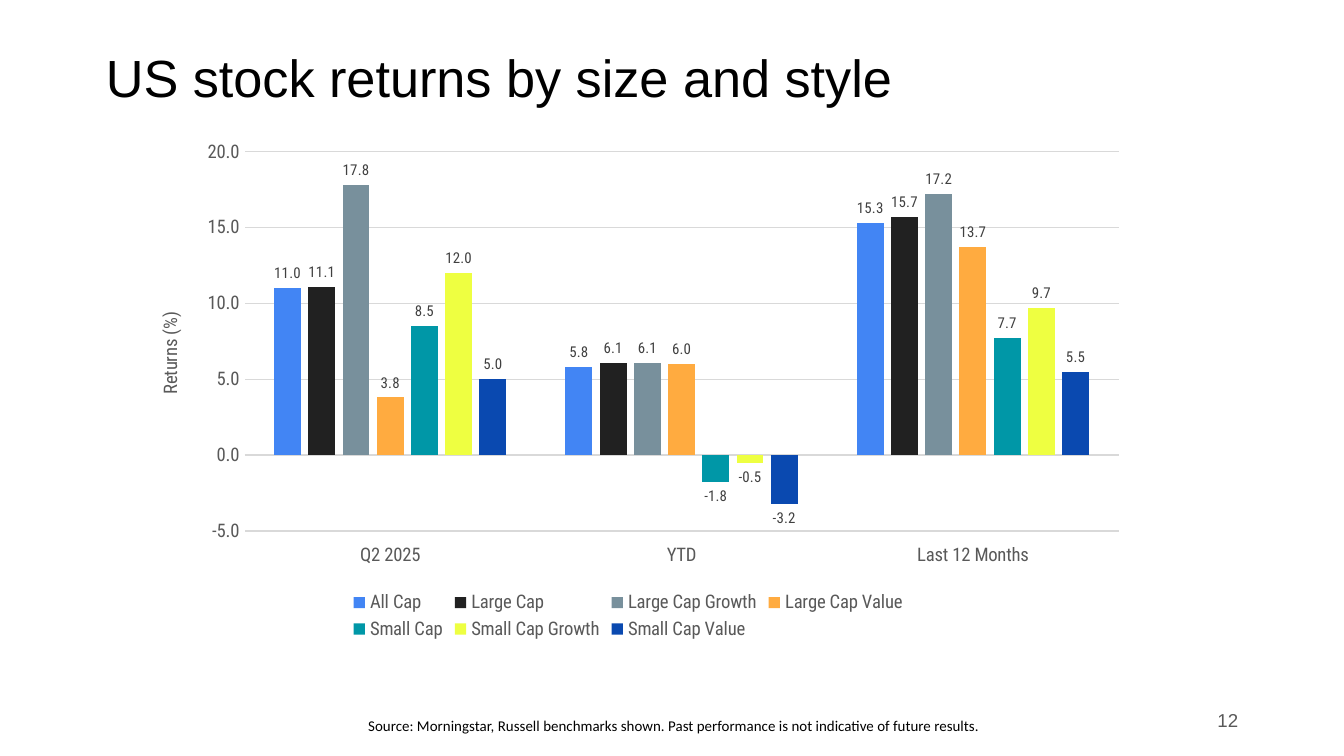
import pptx
import pptx.chart.data
import pptx.dml.color
import pptx.enum.chart
import pptx.enum.text
import pptx.oxml
import pptx.oxml.ns
import pptx.util
from dataclasses import dataclass

Cm = pptx.util.Cm
Pt = pptx.util.Pt
Align = pptx.enum.text.PP_ALIGN
Anchor = pptx.enum.text.MSO_ANCHOR
Kind = pptx.enum.chart


@dataclass(frozen=True)
class Theme:
    ink: str = "000000"
    gray: str = "595959"
    label: str = "404040"
    rule: str = "D9D9D9"
    head: str = "Arial"
    plot: str = "Roboto Condensed"
    note: str = "Calibri"
    big: int = 28
    mid: int = 10
    small: int = 8
    thin: float = 0.75
    form: str = "#,##0.0"


# Returns in percent for each period, with the bar colour
TIMES = ["Q2 2025", "YTD", "Last 12 Months"]
FUNDS = [
    ("All Cap", (11.0, 5.8, 15.3), "4285F4"),
    ("Large Cap", (11.1, 6.1, 15.7), "212121"),
    ("Large Cap Growth", (17.8, 6.1, 17.2), "78909C"),
    ("Large Cap Value", (3.8, 6.0, 13.7), "FFAB40"),
    ("Small Cap", (8.5, -1.8, 7.7), "0097A7"),
    ("Small Cap Growth", (12.0, -0.5, 9.7), "EEFF41"),
    ("Small Cap Value", (5.0, -3.2, 5.5), "0A49B0"),
]


def tint(hue):
    return pptx.dml.color.RGBColor.from_string(hue)


class Page:
    def __init__(self, deck, theme):
        self.theme = theme
        self.slide = deck.slides.add_slide(deck.slide_layouts[5])

    def style(self, font, face, size, hue):
        font.name = face
        font.size = Pt(size)
        font.bold = False
        font.color.rgb = tint(hue)

    def rule(self, line):
        line.color.rgb = tint(self.theme.rule)
        line.width = Pt(self.theme.thin)

    def fill(self, shape, text, face, size, hue, align=Align.LEFT,
             anchor=Anchor.MIDDLE):
        frame = shape.text_frame
        frame.word_wrap = True
        frame.auto_size = pptx.enum.text.MSO_AUTO_SIZE.NONE
        frame.vertical_anchor = anchor
        frame.margin_left = frame.margin_right = Cm(0.25)
        frame.margin_top = frame.margin_bottom = Cm(0.13)
        para = frame.paragraphs[0]
        para.alignment = align
        run = para.add_run()
        run.text = text
        self.style(run.font, face, size, hue)
        return para

    def title(self, text, left, top, width, height):
        shape = self.slide.shapes.title
        shape.left, shape.top = Cm(left), Cm(top)
        shape.width, shape.height = Cm(width), Cm(height)
        look = self.theme
        para = self.fill(shape, text, look.head, look.big, look.ink)
        para.line_spacing = 0.9

    def text(self, text, left, top, width, height, **look):
        box = self.slide.shapes.add_textbox(
            Cm(left), Cm(top), Cm(width), Cm(height))
        self.fill(box, text, **look)

    def chart(self, times, funds, left, top, width, height):
        look = self.theme
        data = pptx.chart.data.CategoryChartData(number_format=look.form)
        data.categories = times
        for name, vals, _ in funds:
            data.add_series(name, vals)
        chart = self.slide.shapes.add_chart(
            Kind.XL_CHART_TYPE.COLUMN_CLUSTERED,
            Cm(left), Cm(top), Cm(width), Cm(height), data).chart
        chart.has_title = False
        self.style(chart.font, look.head, look.mid, look.ink)
        self.bars(chart.plots[0], funds)
        self.axes(chart)
        chart.has_legend = True
        chart.legend.position = Kind.XL_LEGEND_POSITION.BOTTOM
        chart.legend.include_in_layout = False
        self.style(chart.legend.font, look.plot, look.mid, look.gray)
        self.place(chart, x=0.128, y=0.024, w=0.848, h=0.751)

    def bars(self, plot, funds):
        look = self.theme
        plot.gap_width = 219
        plot.overlap = -27
        plot.vary_by_categories = False
        for bar, (_, _, hue) in zip(plot.series, funds):
            bar.invert_if_negative = False
            bar.format.fill.solid()
            bar.format.fill.fore_color.rgb = tint(hue)
            tags = bar.data_labels
            tags.show_value = True
            tags.position = Kind.XL_LABEL_POSITION.OUTSIDE_END
            tags.number_format = look.form
            tags.number_format_is_linked = False
            self.style(tags.font, look.plot, look.small, look.label)

    def axes(self, chart):
        look = self.theme
        base, scale = chart.category_axis, chart.value_axis
        for axis in (base, scale):
            axis.major_tick_mark = Kind.XL_TICK_MARK.NONE
            axis.minor_tick_mark = Kind.XL_TICK_MARK.NONE
            self.style(axis.tick_labels.font, look.plot, look.mid, look.gray)
        base.tick_label_position = Kind.XL_TICK_LABEL_POSITION.LOW
        self.rule(base.format.line)

        scale.minimum_scale, scale.maximum_scale = -5, 20
        scale.major_unit = 5
        scale.tick_labels.number_format = look.form
        scale.tick_labels.number_format_is_linked = False
        scale.format.line.fill.background()
        scale.has_major_gridlines = True
        self.rule(scale.major_gridlines.format.line)
        run = scale.axis_title.text_frame.paragraphs[0].add_run()
        run.text = "Returns (%)"
        self.style(run.font, look.plot, look.mid, look.gray)

    def place(self, chart, **spots):
        # Fix the inner plot area as shares of the chart frame
        qn = pptx.oxml.ns.qn
        area = chart._chartSpace.find(".//" + qn("c:plotArea"))
        for old in area.findall(qn("c:layout")):
            area.remove(old)
        parts = [("layoutTarget", "inner"), ("xMode", "edge"),
                 ("yMode", "edge"), *spots.items()]
        body = "".join(f'<c:{tag} val="{val}"/>' for tag, val in parts)
        area.insert(0, pptx.oxml.parse_xml(
            f'<c:layout {pptx.oxml.ns.nsdecls("c")}>'
            f"<c:manualLayout>{body}</c:manualLayout></c:layout>"))


def main():
    deck = pptx.Presentation()
    deck.slide_width, deck.slide_height = Cm(25.4), Cm(14.29)
    look = Theme()
    page = Page(deck, look)

    # Title
    page.title("US stock returns by size and style", 1.75, 0.13, 21.9, 2.77)

    # Page number
    page.text("12", 17.93, 13.23, 5.72, 0.76, face=look.head,
              size=look.mid, hue=look.gray, align=Align.RIGHT)

    # Returns chart
    page.chart(TIMES, FUNDS, 2.13, 2.64, 19.48, 9.55)

    # Source line
    page.text("Source: Morningstar, Russell benchmarks shown. "
              "Past performance is not indicative of future results.",
              6.71, 13.41, 14.45, 0.61, face=look.note,
              size=look.small, hue=look.ink, anchor=Anchor.TOP)

    deck.save("out.pptx")


if __name__ == "__main__":
    main()
